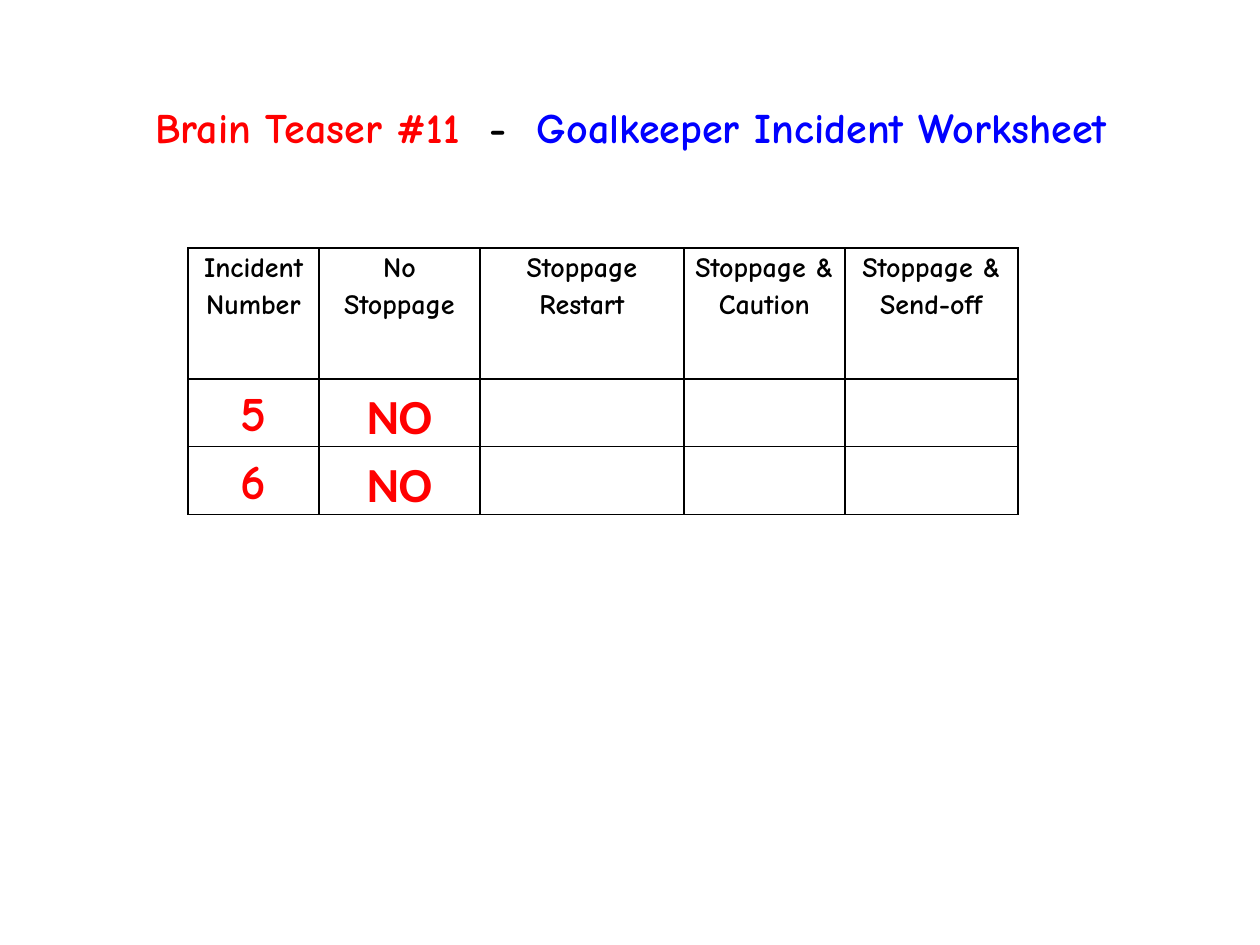
from dataclasses import dataclass

from lxml.etree import SubElement
from pptx import Presentation
from pptx.dml.color import RGBColor as RGB
from pptx.enum.text import MSO_ANCHOR as Anchor, MSO_AUTO_SIZE as AutoSize, PP_ALIGN as Align
from pptx.oxml.ns import qn
from pptx.util import Pt

PX = 914400 / 126


@dataclass(frozen=True)
class Theme:
    body: str = "Comic Neue"
    verdict: str = "Calibri"
    black: RGB = RGB(0, 0, 0)
    red: RGB = RGB(255, 0, 0)
    blue: RGB = RGB(0, 0, 255)
    title_size: int = 24
    header_size: int = 16
    answer_size: int = 28


theme = Theme()


def px(length):
    return round(length * PX)


def add_run(paragraph, text, size, color, face=theme.body):
    run = paragraph.add_run()
    run.text = text
    run.font.name = face
    run.font.size = Pt(size)
    run.font.bold = True
    run.font.color.rgb = color


deck = Presentation()
deck.slide_width, deck.slide_height = px(1260), px(945)
slide = deck.slides.add_slide(deck.slide_layouts[5])

# Title
title = slide.shapes.title
title.left, title.top, title.width, title.height = px(57), px(95), px(1148), px(63)
heading = title.text_frame
heading.word_wrap = False
heading.auto_size = AutoSize.SHAPE_TO_FIT_TEXT
heading.vertical_anchor = Anchor.MIDDLE
heading.paragraphs[0].alignment = Align.CENTER
for text, color in [
    ("Brain Teaser #11  ", theme.red),
    ("-  ", theme.black),
    ("Goalkeeper Incident Worksheet", theme.blue),
]:
    add_run(heading.paragraphs[0], text, theme.title_size, color)

# Worksheet
column_widths = [131, 161, 204, 161, 173]
row_heights = [131, 66, 66]
rows = [
    ["Incident Number", "No Stoppage", "Stoppage Restart", "Stoppage & Caution", "Stoppage & Send-off"],
    ["5", "NO", "", "", ""],
    ["6", "NO", "", "", ""],
]
worksheet = slide.shapes.add_table(
    len(rows), len(column_widths), px(188), px(248), px(sum(column_widths)), px(sum(row_heights))
).table
worksheet.first_row = worksheet.horz_banding = False
for column, width in zip(worksheet.columns, column_widths):
    column.width = px(width)
for row, height in zip(worksheet.rows, row_heights):
    row.height = px(height)

for row_index, row in enumerate(rows):
    for column_index, text in enumerate(row):
        cell = worksheet.cell(row_index, column_index)
        cell.margin_left = cell.margin_right = px(9)
        cell.margin_top = cell.margin_bottom = 0
        # Borders come before the fill in the cell properties
        properties = cell._tc.get_or_add_tcPr()
        for side in ("a:lnL", "a:lnR", "a:lnT", "a:lnB"):
            border = SubElement(properties, qn(side), w=str(Pt(1)))
            ink = SubElement(border, qn("a:solidFill"))
            SubElement(ink, qn("a:srgbClr"), val=str(theme.black))
        cell.fill.background()
        if not text:
            continue
        entry = cell.text_frame.paragraphs[0]
        entry.alignment = Align.CENTER
        entry.line_spacing = 1.15
        entry.space_after = Pt(10)
        if row_index == 0:
            add_run(entry, text, theme.header_size, theme.black)
        else:
            face = theme.verdict if column_index == 1 else theme.body
            add_run(entry, text, theme.answer_size, theme.red, face)

deck.save("out.pptx")
